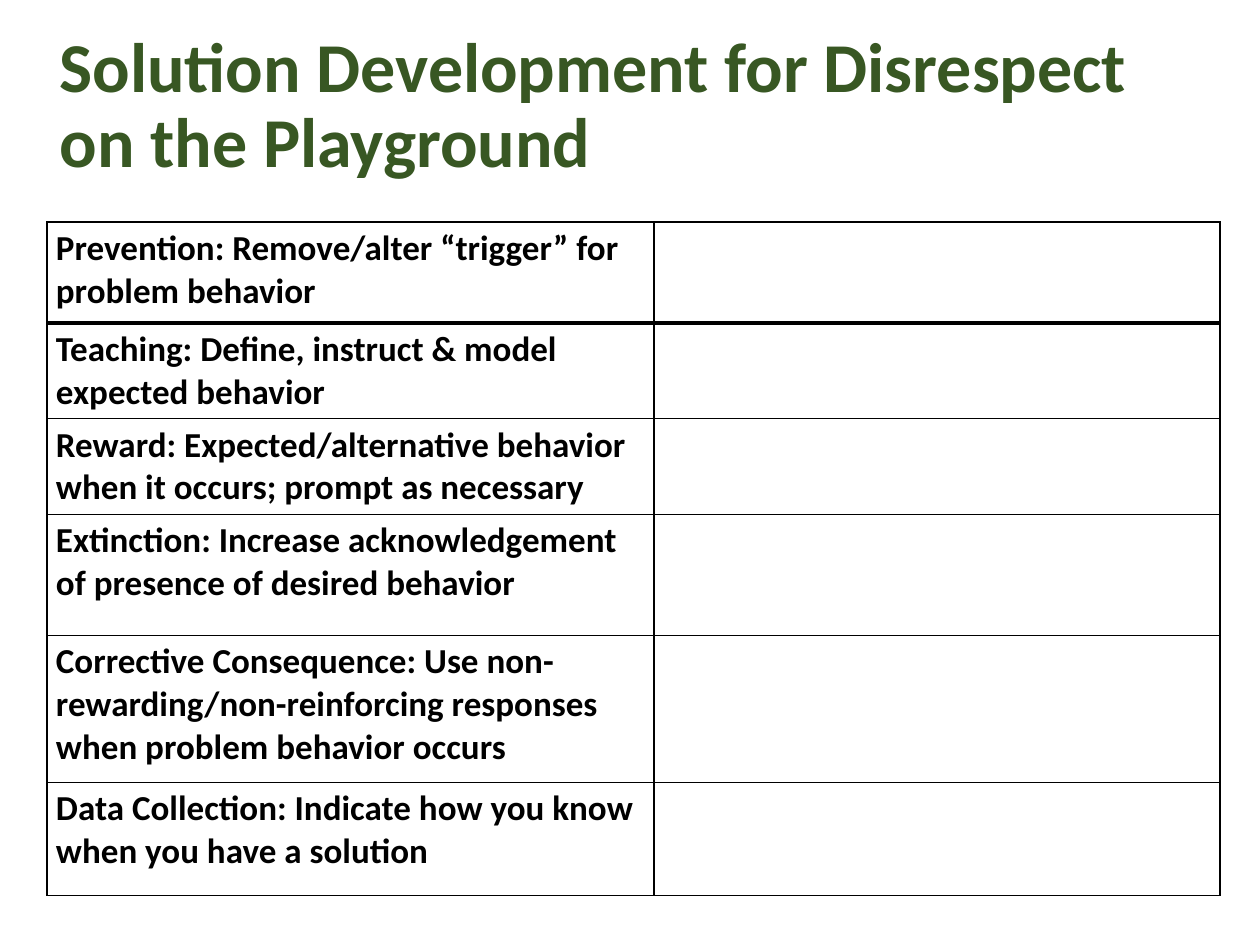
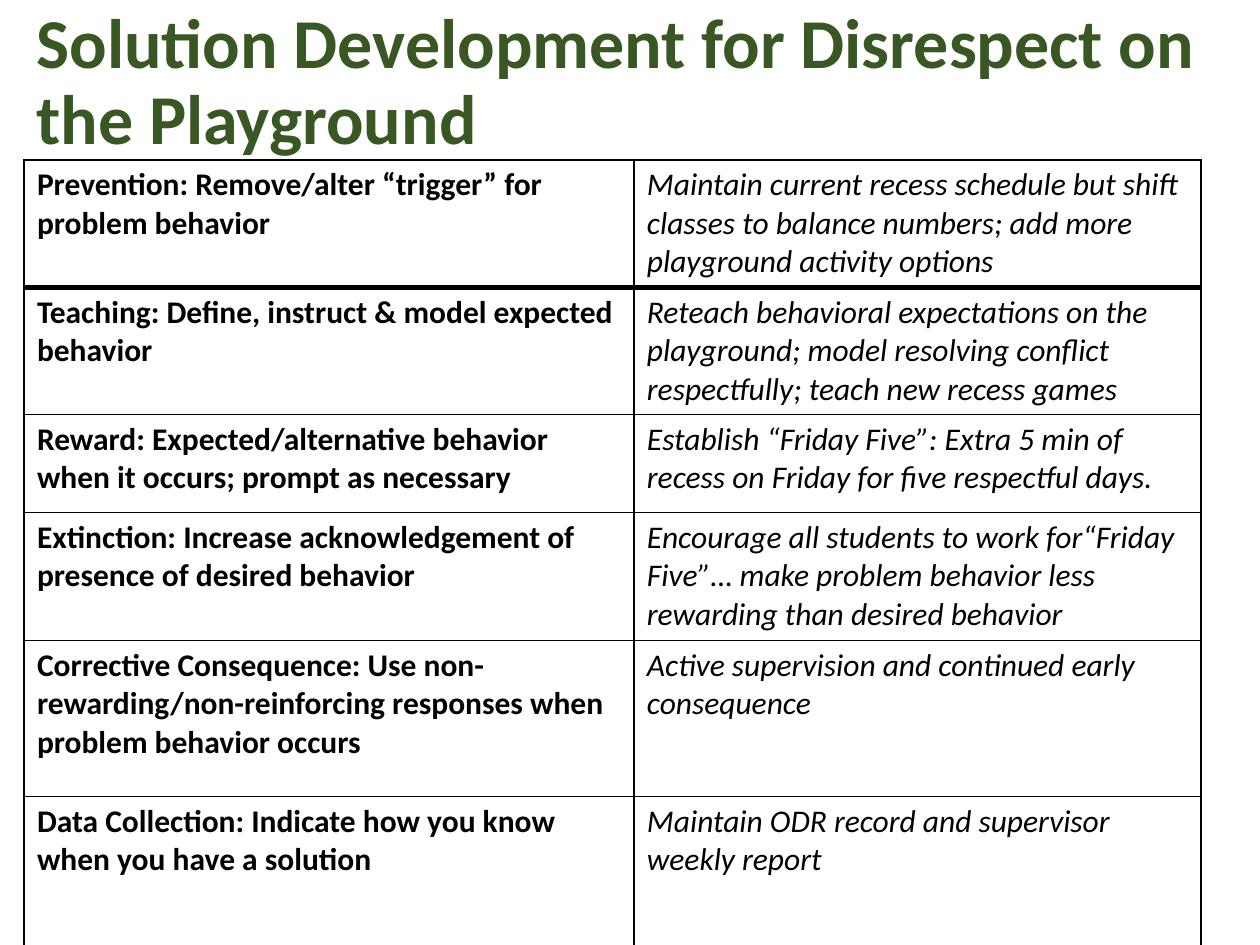
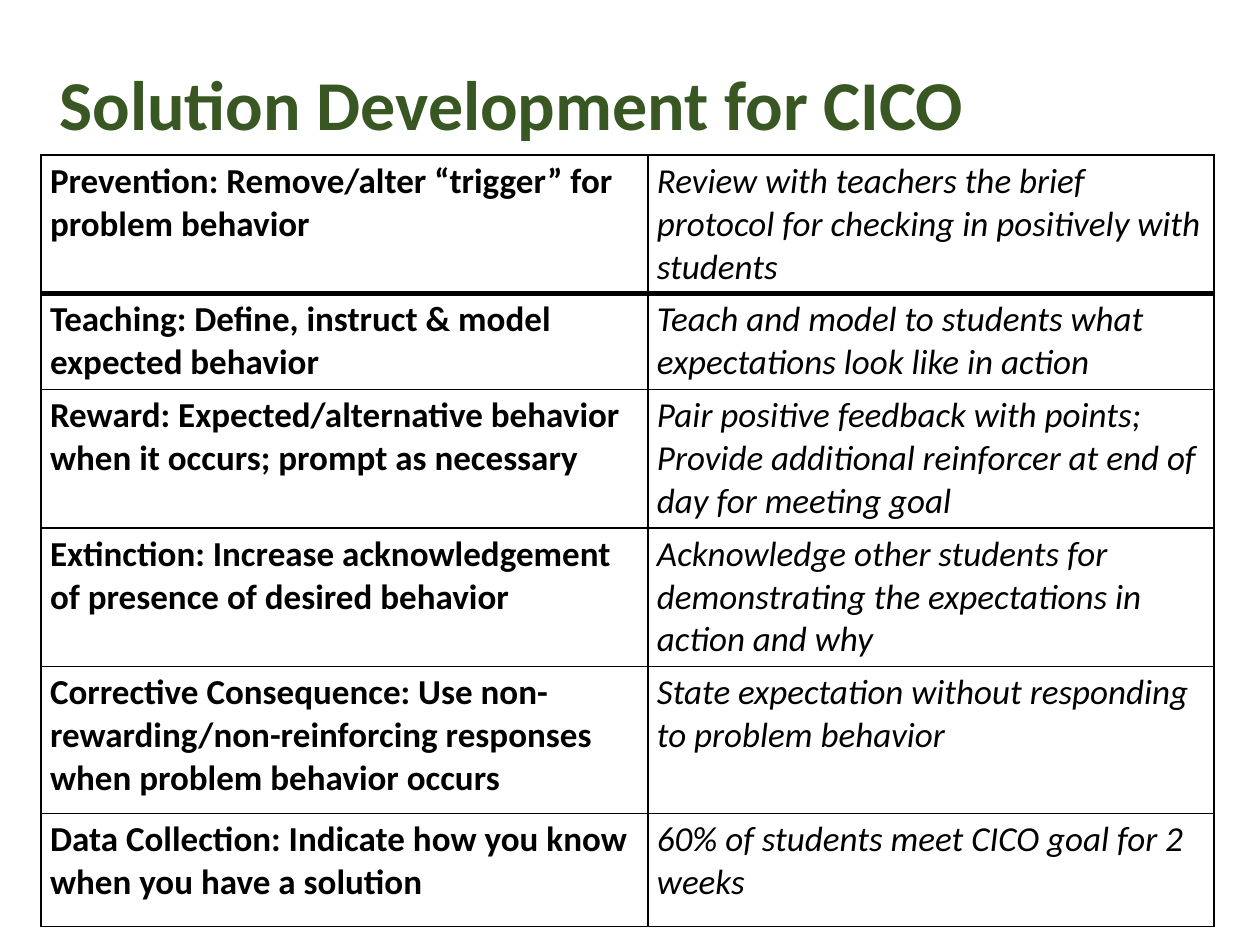
from dataclasses import dataclass

from lxml.etree import SubElement
from pptx import Presentation
from pptx.dml.color import RGBColor
from pptx.enum.text import MSO_ANCHOR, MSO_AUTO_SIZE, PP_ALIGN
from pptx.oxml.ns import qn
from pptx.util import Emu, Pt

PIXELS_PER_INCH = 126
SLIDE_WIDTH, SLIDE_HEIGHT = 1260, 945
TITLE_ONLY_LAYOUT = 5
FONT = "Calibri"
GREEN, BLACK, WHITE = "385723", "000000", "FFFFFF"
THIN_LINE, THICK_LINE = 1, 3

STRATEGIES = [
    "Prevention: Remove/alter “trigger” for problem behavior",
    "Teaching: Define, instruct & model expected behavior",
    "Reward: Expected/alternative behavior when it occurs; prompt as necessary",
    "Extinction: Increase acknowledgement of presence of desired behavior",
    "Corrective Consequence: Use non-rewarding/non-reinforcing responses "
    "when problem behavior occurs",
    "Data Collection: Indicate how you know when you have a solution",
]

PLAYGROUND_ACTIONS = [
    "Maintain current recess schedule but shift classes to balance numbers; "
    "add more playground activity options",
    "Reteach behavioral expectations on the playground; model resolving conflict "
    "respectfully; teach new recess games",
    "Establish “Friday Five”: Extra 5 min of recess on Friday for five respectful days.",
    "Encourage all students to work for“Friday Five”… make problem behavior less "
    "rewarding than desired behavior",
    "Active supervision and continued early consequence",
    "Maintain ODR record and supervisor weekly report",
]

CICO_ACTIONS = [
    "Review with teachers the brief protocol for checking in positively with students",
    "Teach and model to students what expectations look like in action",
    "Pair positive feedback with points; Provide additional reinforcer at end of day "
    "for meeting goal",
    "Acknowledge other students for demonstrating the expectations in action and why",
    "State expectation without responding to problem behavior",
    "60% of students meet CICO goal for 2 weeks",
]


@dataclass(frozen=True)
class Box:
    left: int
    top: int
    width: int
    height: int


@dataclass(frozen=True)
class TableStyle:
    columns: tuple[int, int]
    rows: tuple[int, ...]
    font_size: int
    side_margin: int
    end_margin: int


@dataclass(frozen=True)
class SolutionSlide:
    title: str
    title_box: Box
    table_box: Box
    style: TableStyle
    actions: list[str]


LARGE_TABLE = TableStyle((607, 566), (101, 93, 93, 121, 147, 113), 20, 9, 5)
COMPACT_TABLE = TableStyle((610, 567), (107, 121, 98, 128, 156, 152), 18, 13, 6)
TITLE_BOX = Box(47, 60, 1173, 95)
PLAYGROUND_TITLE = "Solution Development for Disrespect on the Playground"

SOLUTION_SLIDES = [
    SolutionSlide(PLAYGROUND_TITLE, TITLE_BOX, Box(47, 222, 1173, 669),
                  LARGE_TABLE, [""] * len(STRATEGIES)),
    SolutionSlide(PLAYGROUND_TITLE, Box(24, 21, 1236, 126), Box(24, 160, 1177, 788),
                  COMPACT_TABLE, PLAYGROUND_ACTIONS),
    SolutionSlide("Solution Development for CICO", TITLE_BOX, Box(41, 155, 1173, 760),
                  LARGE_TABLE, CICO_ACTIONS),
]


def px(length: int) -> Emu:
    return Emu(round(length * 914400 / PIXELS_PER_INCH))


def color(hex_value: str) -> RGBColor:
    return RGBColor.from_string(hex_value)


def write_text(text_frame, text: str, *, size: int, hex_color: str = BLACK,
               bold: bool = False, italic: bool = False,
               line_spacing: float = 1.0) -> None:
    paragraph = text_frame.paragraphs[0]
    paragraph.alignment = PP_ALIGN.LEFT
    paragraph.line_spacing = line_spacing
    paragraph.space_before = Pt(0)
    run = paragraph.add_run()
    run.text = text
    run.font.name = FONT
    run.font.size = Pt(size)
    run.font.bold = bold
    run.font.italic = italic
    run.font.color.rgb = color(hex_color)


def set_border(cell, side: str, width: int) -> None:
    properties = cell._tc.get_or_add_tcPr()
    line = SubElement(properties, qn(f"a:ln{side}"), w=str(Pt(width)))
    fill = SubElement(line, qn("a:solidFill"))
    SubElement(fill, qn("a:srgbClr"), val=BLACK)


def format_cell(cell, row_index: int, style: TableStyle) -> None:
    cell.margin_left = cell.margin_right = px(style.side_margin)
    cell.margin_top = cell.margin_bottom = px(style.end_margin)
    set_border(cell, "L", THIN_LINE)
    set_border(cell, "R", THIN_LINE)
    set_border(cell, "T", THICK_LINE if row_index == 1 else THIN_LINE)
    set_border(cell, "B", THICK_LINE if row_index == 0 else THIN_LINE)
    cell.fill.solid()
    cell.fill.fore_color.rgb = color(WHITE)


def add_title(slide, text: str, box: Box) -> None:
    title = slide.shapes.title
    title.left, title.top = px(box.left), px(box.top)
    title.width, title.height = px(box.width), px(box.height)
    text_frame = title.text_frame
    text_frame.word_wrap = True
    text_frame.auto_size = MSO_AUTO_SIZE.NONE
    text_frame.vertical_anchor = MSO_ANCHOR.MIDDLE
    write_text(text_frame, text, size=40, hex_color=GREEN, bold=True, line_spacing=0.9)


def add_solution_table(slide, solution: SolutionSlide) -> None:
    box, style = solution.table_box, solution.style
    frame = slide.shapes.add_table(
        len(style.rows), len(style.columns),
        px(box.left), px(box.top), px(box.width), px(box.height))
    table = frame.table
    table.first_row = False
    table.horz_banding = False
    for column, width in zip(table.columns, style.columns):
        column.width = px(width)
    for row, height in zip(table.rows, style.rows):
        row.height = px(height)
    frame.height = px(box.height)
    for row_index, texts in enumerate(zip(STRATEGIES, solution.actions)):
        for column_index, text in enumerate(texts):
            cell = table.cell(row_index, column_index)
            format_cell(cell, row_index, style)
            if text:
                write_text(cell.text_frame, text, size=style.font_size,
                           bold=column_index == 0, italic=column_index == 1)


def main() -> None:
    presentation = Presentation()
    presentation.slide_width = px(SLIDE_WIDTH)
    presentation.slide_height = px(SLIDE_HEIGHT)
    for solution in SOLUTION_SLIDES:
        slide = presentation.slides.add_slide(presentation.slide_layouts[TITLE_ONLY_LAYOUT])
        add_title(slide, solution.title, solution.title_box)
        add_solution_table(slide, solution)
    presentation.save("out.pptx")


if __name__ == "__main__":
    main()
